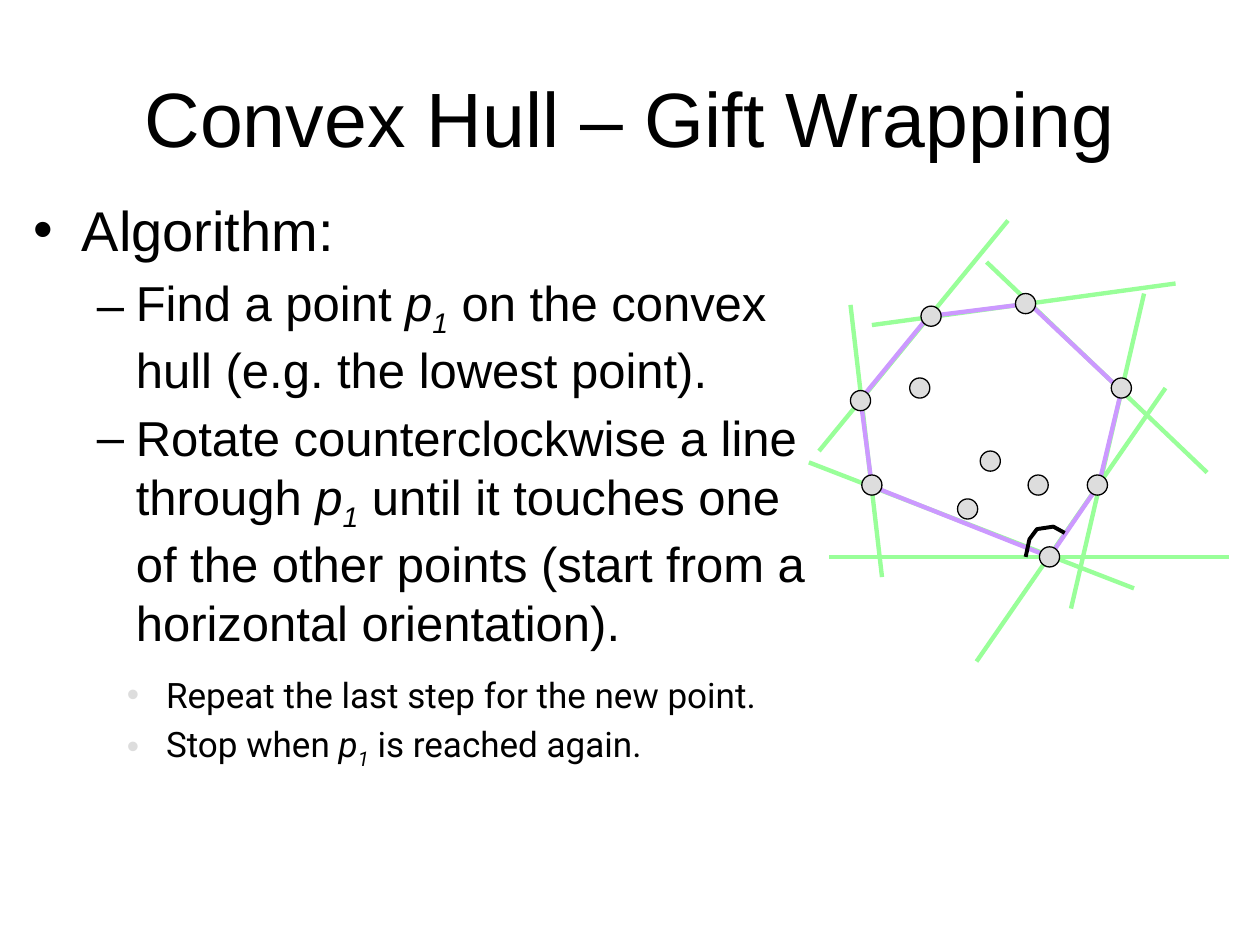
import dataclasses

import lxml.etree
import pptx
import pptx.dml.color
import pptx.enum.shapes
import pptx.enum.text
import pptx.oxml.ns
import pptx.util

Inches = pptx.util.Inches


@dataclasses.dataclass(frozen=True)
class Theme:
    ink: str = "000000"
    tangent: str = "99FF99"
    hull: str = "CC99FF"
    dot: str = "DDDDDD"
    main_font: str = "Arial"
    note_font: str = "Roboto"
    title_size: int = 44
    heading_size: int = 32
    step_size: int = 28
    note_size: int = 20
    line_width: float = 2.5
    angle_width: float = 2.25
    dot_outline: float = 0.75


THEME = Theme()
DOT_SIZE = 0.16
POINT_MARK = "{p1}"  # stands for an italic p with subscript 1

STEPS = [
    "Find a point {p1} on the convex hull (e.g. the lowest point).",
    "Rotate counterclockwise a line through {p1} until it touches one of "
    "the other points (start from a horizontal orientation).",
]
NOTES = ["Repeat the last step for the new point.", "Stop when {p1} is reached again."]

# Diagram coordinates in inches
TANGENTS = [
    ((6.58, 4.42), (9.75, 4.42)),
    ((7.75, 5.25), (9.25, 3.08)),
    ((8.5, 4.83), (9.08, 2.33)),
    ((9.58, 3.75), (7.83, 2.08)),
    ((9.33, 2.25), (6.92, 2.58)),
    ((8, 1.75), (6.5, 3.58)),
    ((6.75, 2.42), (7, 4.58)),
    ((6.42, 3.67), (9, 4.67)),
]
HULL = [(8.33, 4.42), (8.72, 3.85), (8.9, 3.1), (8.17, 2.41),
        (7.37, 2.51), (6.83, 3.17), (6.92, 3.86)]
DOT_CENTERS = [(7.39, 2.51), (8.24, 3.85), (6.83, 3.18), (8.14, 2.41),
               (8.9, 3.08), (8.71, 3.85), (7.3, 3.08), (8.33, 4.42),
               (7.68, 4.04), (7.86, 3.66), (6.92, 3.85)]
ANGLE = [(8.45, 4.23), (8.36, 4.18), (8.23, 4.2), (8.17, 4.28), (8.14, 4.42)]


def color(value):
    return pptx.dml.color.RGBColor.from_string(value)


def style_line(line, value, width):
    line.color.rgb = color(value)
    line.width = pptx.util.Pt(width)


def add_text_box(slide, left, top, width, height):
    shape = slide.shapes.add_textbox(Inches(left), Inches(top), Inches(width), Inches(height))
    shape.text_frame.word_wrap = True
    return shape.text_frame


def format_run(run, font_name, size):
    run.font.name = font_name
    run.font.size = pptx.util.Pt(size)
    run.font.color.rgb = color(THEME.ink)


def write_text(paragraph, text, font_name, size):
    """Write text, setting each point mark as an italic p with subscript 1."""
    first, *others = text.split(POINT_MARK)
    paragraph.text = first
    for part in others:
        for piece in ("p", "1", part):
            paragraph.add_run().text = piece
        variable, subscript = paragraph.runs[-3:-1]
        variable.font.italic = subscript.font.italic = True
        subscript._r.get_or_add_rPr().set("baseline", "-25000")
    for run in paragraph.runs:
        format_run(run, font_name, size)


def set_bullet(paragraph, character, margin, hanging, bullet_color):
    properties = paragraph._p.get_or_add_pPr()
    properties.set("marL", str(Inches(margin)))
    properties.set("indent", str(-Inches(hanging)))
    qn = pptx.oxml.ns.qn
    fill = lxml.etree.SubElement(properties, qn("a:buClr"))
    lxml.etree.SubElement(fill, qn("a:srgbClr"), val=bullet_color)
    lxml.etree.SubElement(properties, qn("a:buFont"), typeface=THEME.main_font)
    lxml.etree.SubElement(properties, qn("a:buChar"), char=character)


def write_bullet(paragraph, text, font_name, size, character, level=1, bullet_color=THEME.ink):
    write_text(paragraph, text, font_name, size)
    paragraph.level = level
    paragraph.space_before = pptx.util.Pt(size * 0.2)
    margin, hanging = (0.81, 0.31) if level else (0.38, 0.38)
    set_bullet(paragraph, character, margin, hanging, bullet_color)


def add_title(slide, text):
    frame = add_text_box(slide, 0.5, 0.3, 9, 1.25)
    frame.vertical_anchor = pptx.enum.text.MSO_ANCHOR.MIDDLE
    paragraph = frame.paragraphs[0]
    paragraph.alignment = pptx.enum.text.PP_ALIGN.CENTER
    write_text(paragraph, text, THEME.main_font, THEME.title_size)


def add_steps(slide):
    frame = add_text_box(slide, 0.17, 1.5, 6.42, 4.67)
    write_bullet(frame.paragraphs[0], "Algorithm:", THEME.main_font,
                 THEME.heading_size, "•", level=0)
    for step in STEPS:
        write_bullet(frame.add_paragraph(), step, THEME.main_font, THEME.step_size, "–")


def add_notes(slide):
    frame = add_text_box(slide, 0.41, 5.3, 9.5, 2.17)
    for index, note in enumerate(NOTES):
        paragraph = frame.add_paragraph() if index else frame.paragraphs[0]
        write_bullet(paragraph, note, THEME.note_font, THEME.note_size, "•",
                     bullet_color=THEME.dot)


def add_tangent(slide, start, end):
    connector = slide.shapes.add_connector(
        pptx.enum.shapes.MSO_CONNECTOR.STRAIGHT, *map(Inches, start + end))
    style_line(connector.line, THEME.tangent, THEME.line_width)
    lxml.etree.SubElement(connector._element.spPr, pptx.oxml.ns.qn("a:effectLst"))


def add_open_path(slide, points, value, width):
    start, *rest = [tuple(map(Inches, point)) for point in points]
    builder = slide.shapes.build_freeform(*start)
    builder.add_line_segments(rest, close=False)
    shape = builder.convert_to_shape()
    shape.shadow.inherit = False
    shape.fill.background()
    style_line(shape.line, value, width)


def add_dot(group, center):
    left, top = (Inches(value - DOT_SIZE / 2) for value in center)
    shape = group.shapes.add_shape(pptx.enum.shapes.MSO_SHAPE.OVAL, left, top,
                                   Inches(DOT_SIZE), Inches(DOT_SIZE))
    shape.shadow.inherit = False
    shape.fill.solid()
    shape.fill.fore_color.rgb = color(THEME.dot)
    style_line(shape.line, THEME.ink, THEME.dot_outline)


def add_diagram(slide):
    for start, end in TANGENTS:
        add_tangent(slide, start, end)
    # Hull edges join each vertex to the next, back to the first
    for edge in zip(HULL, HULL[1:] + HULL[:1]):
        add_open_path(slide, edge, THEME.hull, THEME.line_width)
    group = slide.shapes.add_group_shape()
    for center in DOT_CENTERS:
        add_dot(group, center)
    # Rotation angle at the lowest point
    add_open_path(slide, ANGLE, THEME.ink, THEME.angle_width)


def main():
    presentation = pptx.Presentation()
    presentation.slide_width = Inches(10)
    presentation.slide_height = Inches(7.5)
    slide = presentation.slides.add_slide(presentation.slide_layouts[6])
    add_title(slide, "Convex Hull – Gift Wrapping")
    add_steps(slide)
    add_notes(slide)
    add_diagram(slide)
    presentation.save("out.pptx")


if __name__ == "__main__":
    main()
